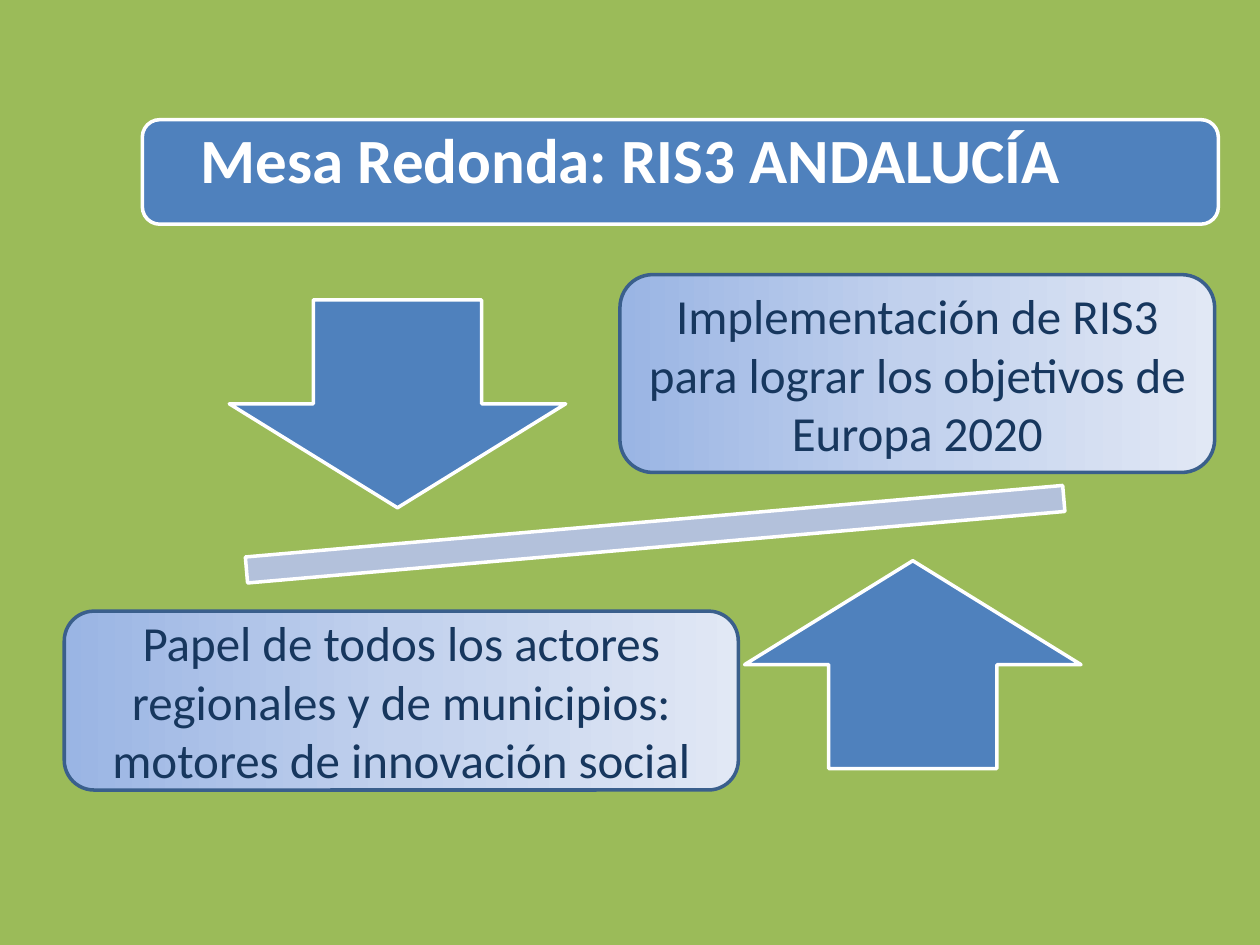
from copy import deepcopy

from pptx import Presentation
from pptx.dml.color import RGBColor
from pptx.enum.shapes import MSO_SHAPE
from pptx.enum.text import MSO_ANCHOR, MSO_AUTO_SIZE, PP_ALIGN
from pptx.oxml.ns import qn
from pptx.util import Inches, Pt

GREEN = RGBColor(0x9B, 0xBB, 0x59)
BLUE = RGBColor(0x4F, 0x81, 0xBD)
PALE_BLUE = RGBColor(0xB3, 0xC1, 0xDB)
EDGE_BLUE = RGBColor(0x3A, 0x5F, 0x8C)
NAVY = RGBColor(0x17, 0x37, 0x5E)
WHITE = RGBColor(0xFF, 0xFF, 0xFF)
GRADIENT = [
    (0, RGBColor(0x9A, 0xB5, 0xE4)),
    (0.5, RGBColor(0xC2, 0xD1, 0xED)),
    (1, RGBColor(0xE1, 0xE8, 0xF5)),
]


class SlideBuilder:
    """Draw the elements of one slide in a shared style."""

    font = "Calibri"
    line_width = Pt(2)

    def __init__(self, slide):
        self.slide = slide

    def background(self, color):
        fill = self.slide.background.fill
        fill.solid()
        fill.fore_color.rgb = color

    def shape(self, kind, box, line=WHITE, fill=BLUE, rotation=0):
        sp = self.slide.shapes.add_shape(kind, *map(Inches, box))
        sp.shadow.inherit = False
        sp.rotation = rotation
        sp.fill.solid()
        sp.fill.fore_color.rgb = fill
        sp.line.color.rgb = line
        sp.line.width = self.line_width
        return sp

    def set_text(self, sp, text, size, color, bold=False):
        tf = sp.text_frame
        tf.word_wrap = True
        tf.auto_size = MSO_AUTO_SIZE.NONE
        tf.vertical_anchor = MSO_ANCHOR.MIDDLE
        p = tf.paragraphs[0]
        p.text = text
        p.alignment = PP_ALIGN.CENTER
        p.font.name = self.font
        p.font.size = Pt(size)
        p.font.bold = bold
        p.font.color.rgb = color
        return tf

    def title(self, text, box):
        sp = self.slide.shapes.title
        sp.left, sp.top, sp.width, sp.height = map(Inches, box)
        tf = self.set_text(sp, text, 36, WHITE, bold=True)
        tf.margin_left = tf.margin_right = Inches(0.07)
        tf.margin_top = tf.margin_bottom = Inches(0.07)
        tf.paragraphs[0].line_spacing = 0.9
        self.slide.shapes.element.append(sp.element)

    def card(self, text, box):
        sp = self.shape(MSO_SHAPE.ROUNDED_RECTANGLE, box, line=EDGE_BLUE)
        sp.fill.gradient()
        sp.fill.gradient_angle = 0
        first_stop = next(sp.element.spPr.iter(qn("a:gs")))
        first_stop.addnext(deepcopy(first_stop))
        for stop, (position, color) in zip(sp.fill.gradient_stops, GRADIENT):
            stop.position = position
            stop.color.rgb = color
        self.set_text(sp, text, 28, NAVY)


def main():
    prs = Presentation()
    prs.slide_width, prs.slide_height = Inches(10), Inches(7.5)
    s = SlideBuilder(prs.slides.add_slide(prs.slide_layouts[5]))
    s.background(GREEN)
    s.shape(MSO_SHAPE.ROUNDED_RECTANGLE, (1.13, 0.95, 8.54, 0.83))
    s.title("Mesa Redonda: RIS3 ANDALUCÍA", (0.83, 0.92, 8.35, 0.75))
    s.shape(MSO_SHAPE.MATH_MINUS, (0.77, 3.8, 8.86, 0.88), fill=PALE_BLUE, rotation=355)
    s.shape(MSO_SHAPE.DOWN_ARROW, (1.82, 2.38, 2.67, 1.65))
    s.shape(MSO_SHAPE.UP_ARROW, (5.91, 4.45, 2.67, 1.65))
    s.card(
        "Implementación de RIS3 para lograr los objetivos de Europa 2020",
        (4.92, 2.18, 4.72, 1.57),
    )
    s.card(
        "Papel de todos los actores regionales y de municipios: "
        "motores de innovación social",
        (0.51, 4.85, 5.35, 1.42),
    )
    prs.save("out.pptx")


if __name__ == "__main__":
    main()
